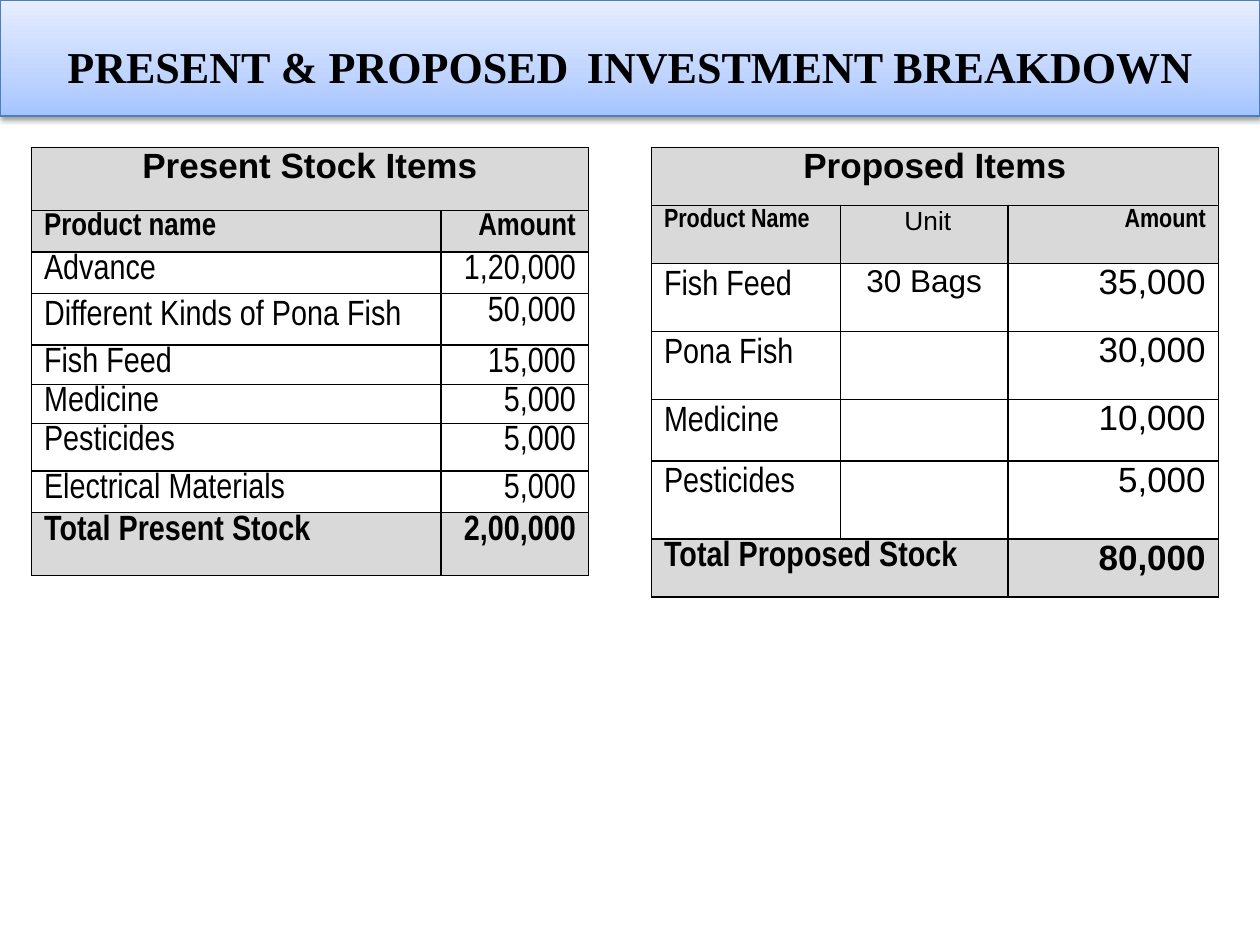
from dataclasses import dataclass, replace

from lxml.etree import SubElement
from pptx import Presentation
from pptx.dml.color import RGBColor
from pptx.enum.text import MSO_ANCHOR, MSO_AUTO_SIZE, PP_ALIGN
from pptx.oxml import parse_xml
from pptx.oxml.ns import nsdecls, qn
from pptx.util import Inches, Pt

BLACK, GREY = "000000", "D9D9D9"
LEFT, CENTER, RIGHT = PP_ALIGN.LEFT, PP_ALIGN.CENTER, PP_ALIGN.RIGHT


@dataclass(frozen=True)
class Style:
    font: str
    size: float
    bold: bool = False
    align: PP_ALIGN = LEFT
    spacing: float = 0.8


@dataclass(frozen=True)
class Cell:
    text: str
    style: Style
    fill: str = ""
    span: int = 1


@dataclass(frozen=True)
class StockTable:
    left: float
    top: float
    cols: list[float]
    heights: list[float]
    rows: list[list[Cell]]


def rgb(color: str) -> RGBColor:
    return RGBColor.from_string(color)


def format_run(r, font: str, size: float, bold: bool) -> None:
    r.font.name, r.font.size, r.font.bold = font, Pt(size), bold
    r.font.color.rgb = rgb(BLACK)


def add_borders(cell) -> None:
    tc_pr = cell._tc.get_or_add_tcPr()
    for side in ("a:lnL", "a:lnR", "a:lnT", "a:lnB"):
        line = SubElement(tc_pr, qn(side), w=str(Pt(1)))
        SubElement(SubElement(line, qn("a:solidFill")), qn("a:srgbClr"), val=BLACK)


def fill_cell(cell, color: str) -> None:
    if color:
        cell.fill.solid()
        cell.fill.fore_color.rgb = rgb(color)
    else:
        cell.fill.background()


def write_cell(cell, content: Cell) -> None:
    cell.text_frame.text = content.text
    p, style = cell.text_frame.paragraphs[0], content.style
    p.alignment, p.line_spacing = style.align, style.spacing
    for r in p.runs:
        format_run(r, style.font, style.size, style.bold)


def add_stock_table(s, t: StockTable) -> None:
    table = s.shapes.add_table(
        len(t.heights), len(t.cols), Inches(t.left), Inches(t.top),
        Inches(sum(t.cols)), Inches(sum(t.heights))).table
    table.first_row = table.horz_banding = False
    for column, width in zip(table.columns, t.cols):
        column.width = Inches(width)
    for i, (height, row) in enumerate(zip(t.heights, t.rows)):
        table.rows[i].height = Inches(height)
        j = 0
        for content in row:
            for k in range(j, j + content.span):
                cell = table.cell(i, k)
                cell.margin_top, cell.margin_bottom = Inches(0.05), 0
                add_borders(cell)
                fill_cell(cell, content.fill)
            if content.span > 1:
                table.cell(i, j).merge(table.cell(i, j + content.span - 1))
            write_cell(table.cell(i, j), content)
            j += content.span


def add_title(s) -> None:
    sp = s.shapes.title
    sp.left, sp.top, sp.width, sp.height = 0, 0, Inches(10), Inches(0.92)
    # Gradient, outline and shadow of the banner
    stops = "".join(
        f'<a:gs pos="{pos * 1000}"><a:srgbClr val="{color}"/></a:gs>'
        for pos, color in ((0, "A4C4FF"), (35, "BFD4FF"), (100, "E6EEFF")))
    sp_pr = sp._element.spPr
    sp_pr.append(parse_xml(
        f'<a:gradFill {nsdecls("a")} rotWithShape="1"><a:gsLst>{stops}</a:gsLst>'
        '<a:lin ang="16200000" scaled="0"/></a:gradFill>'))
    sp.line.color.rgb = rgb("4B7EBC")
    sp.line.width = Pt(0.75)
    sp_pr.append(parse_xml(
        f'<a:effectLst {nsdecls("a")}><a:outerShdw blurRad="{Pt(3.1)}" '
        f'dist="{Pt(1.6)}" dir="5400000" rotWithShape="0"><a:srgbClr val="{BLACK}">'
        '<a:alpha val="38000"/></a:srgbClr></a:outerShdw></a:effectLst>'))
    # Title text
    tf = sp.text_frame
    tf.auto_size, tf.vertical_anchor = MSO_AUTO_SIZE.NONE, MSO_ANCHOR.MIDDLE
    p = tf.paragraphs[0]
    p.alignment = CENTER
    for text, font, size in (
            ("PRESENT & PROPOSED", "Times New Roman", 25.2),
            (" ", "TeX Gyre Schola", 36),
            ("INVESTMENT BREAKDOWN", "Times New Roman", 25.2)):
        r = p.add_run()
        r.text = text
        format_run(r, font, size, True)


# Text styles
HEADING = Style("Arial", 20, True, CENTER)
NARROW = Style("Arial Narrow", 20)
NARROW_FULL = replace(NARROW, spacing=1.0)
NARROW_TOTAL = replace(NARROW, bold=True)
PRESENT_HEAD = Style("Arial Narrow", 18, True)
PROPOSED_HEAD = Style("Arial Narrow", 15, True)
UNIT_HEAD = Style("Arial", 15, align=CENTER)
UNIT = Style("Arial", 18, align=CENTER)
AMOUNT = Style("Arial", 20, align=RIGHT)


def right(style: Style) -> Style:
    return replace(style, align=RIGHT)


# Table contents
PRESENT_ITEMS = [
    ("Advance", "1,20,000", NARROW),
    ("Different Kinds of Pona Fish", "50,000", NARROW_FULL),
    ("Fish Feed", "15,000", NARROW),
    ("Medicine", "5,000", NARROW),
    ("Pesticides", "5,000", NARROW),
    ("Electrical Materials", "5,000", NARROW),
]
PROPOSED_ITEMS = [
    ("Fish Feed", "30 Bags", "35,000"),
    ("Pona Fish", "", "30,000"),
    ("Medicine", "", "10,000"),
    ("Pesticides", "", "5,000"),
]

PRESENT = StockTable(
    0.25, 1.17, [3.25, 1.17],
    [0.5, 0.33, 0.33, 0.41, 0.31, 0.31, 0.38, 0.33, 0.5],
    [[Cell("Present Stock Items", HEADING, GREY, 2)],
     [Cell("Product name", PRESENT_HEAD, GREY),
      Cell("Amount", right(PRESENT_HEAD), GREY)],
     *[[Cell(name, style), Cell(amount, right(NARROW))]
       for name, amount, style in PRESENT_ITEMS],
     [Cell("Total Present Stock", NARROW_TOTAL, GREY),
      Cell("2,00,000", right(NARROW_TOTAL), GREY)]])

PROPOSED = StockTable(
    5.17, 1.17, [1.5, 1.33, 1.67],
    [0.46, 0.46, 0.54, 0.54, 0.49, 0.62, 0.46],
    [[Cell("Proposed Items", HEADING, GREY, 3)],
     [Cell("Product Name", PROPOSED_HEAD, GREY), Cell(" Unit", UNIT_HEAD, GREY),
      Cell("Amount", right(PROPOSED_HEAD), GREY)],
     *[[Cell(name, NARROW_FULL), Cell(unit, UNIT), Cell(amount, AMOUNT)]
       for name, unit, amount in PROPOSED_ITEMS],
     [Cell("Total Proposed Stock", NARROW_TOTAL, GREY, 2),
      Cell("80,000", replace(AMOUNT, bold=True), GREY)]])


def main() -> None:
    prs = Presentation()
    prs.slide_width, prs.slide_height = Inches(10), Inches(7.5)
    s = prs.slides.add_slide(prs.slide_layouts[5])
    add_title(s)
    for stock_table in (PRESENT, PROPOSED):
        add_stock_table(s, stock_table)
    prs.save("out.pptx")


if __name__ == "__main__":
    main()
